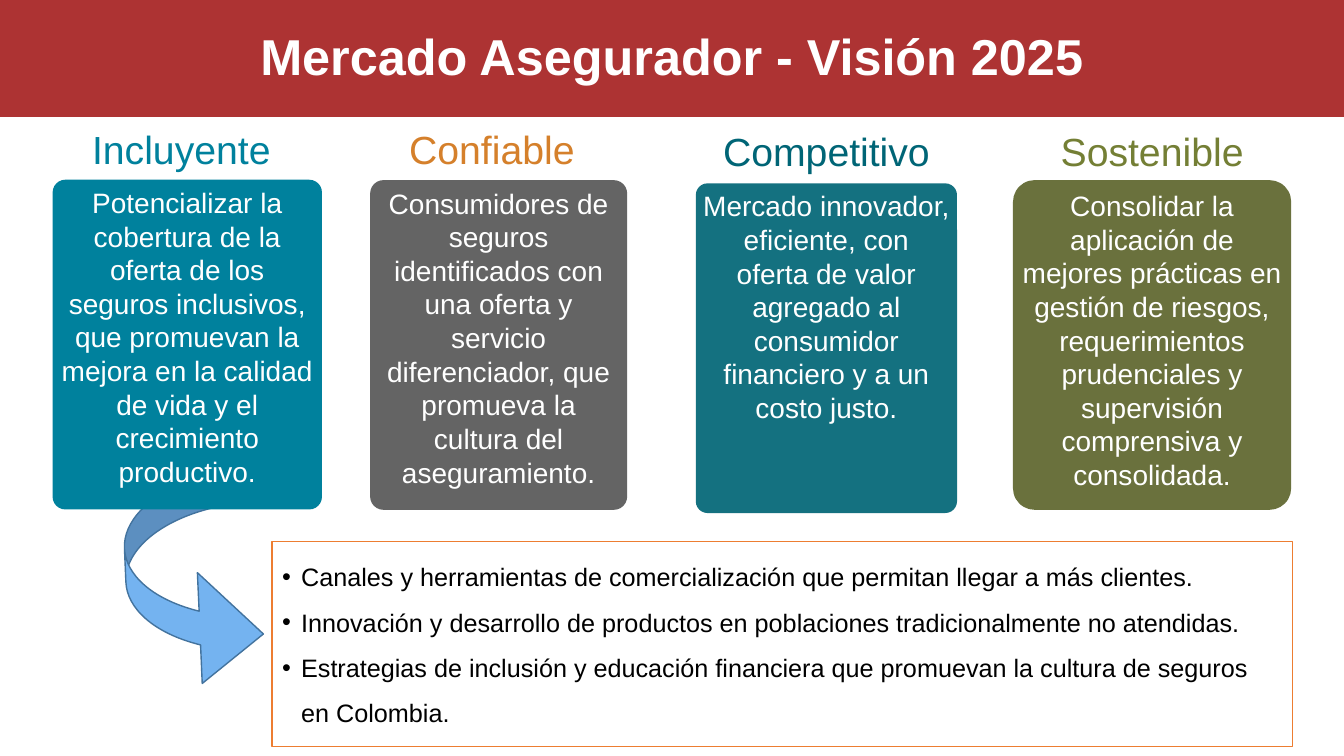
from dataclasses import dataclass

from lxml import etree
from pptx import Presentation
from pptx.dml.color import RGBColor
from pptx.enum.shapes import MSO_SHAPE
from pptx.enum.text import MSO_ANCHOR, MSO_AUTO_SIZE, PP_ALIGN
from pptx.oxml.ns import qn
from pptx.util import Pt

RECT, ROUNDED = MSO_SHAPE.RECTANGLE, MSO_SHAPE.ROUNDED_RECTANGLE
CURVED_ARROW = MSO_SHAPE.CURVED_RIGHT_ARROW
TOP, MIDDLE = MSO_ANCHOR.TOP, MSO_ANCHOR.MIDDLE
CENTER, LEFT = PP_ALIGN.CENTER, PP_ALIGN.LEFT
NO_FIT = MSO_AUTO_SIZE.NONE
Box = tuple[float, float, float, float]

COLORS = {
    "banner": "AD3333", "white": "FFFFFF", "black": "000000",
    "arrow": "74B3F0", "arrow_line": "43739E", "border": "ED7D31",
    "blue": "00819D", "orange": "D5802B", "gray": "595959",
    "teal": "006576", "olive": "747F35", "dark_olive": "5C642A",
}


@dataclass
class Pillar:
    """A heading and the card below it."""
    heading: str
    heading_box: Box
    heading_color: str
    text: str
    card_box: Box
    card_color: str
    opacity: int
    corner: float


PILLARS = [
    Pillar("Incluyente", (33.8, 66.2, 191.5, 80), "blue",
           "Potencializar la cobertura de la oferta de los seguros inclusivos, que "
           "promuevan la mejora en la calidad de vida y el crecimiento productivo.",
           (37.6, 128.4, 192.4, 235.5), "blue", 100, 0.047),
    Pillar("Confiable", (228.2, 66.2, 246.2, 80), "orange",
           "Consumidores de seguros identificados con una oferta y servicio "
           "diferenciador, que promueva la cultura del aseguramiento.",
           (264.4, 128.7, 183.6, 235.5), "gray", 93, 0.052),
    Pillar("Competitivo", (480.2, 73.4, 220.3, 68.4), "teal",
           "Mercado innovador, eficiente, con\voferta de valor agregado al "
           "consumidor financiero y a un costo justo.",
           (497, 131, 186.6, 235.5), "teal", 92, 0.045),
    Pillar("Sostenible", (712.8, 67.7, 220.3, 80), "olive",
           "Consolidar la aplicación de mejores prácticas en gestión de riesgos, "
           "requerimientos prudenciales y supervisión comprensiva y consolidada.",
           (723.6, 128.7, 198.7, 235.5), "dark_olive", 91, 0.078),
]

ACTIONS = [
    "Canales y herramientas de comercialización que permitan llegar a más clientes.",
    "Innovación y desarrollo de productos en poblaciones tradicionalmente no atendidas.",
    "Estrategias de inclusión y educación financiera que promuevan la cultura de "
    "seguros en Colombia.",
]


def rgb(name: str) -> RGBColor:
    """Look up a named colour."""
    return RGBColor.from_string(COLORS[name])


def apply(obj, values: dict) -> None:
    """Set each attribute from a dict of format values."""
    for name, value in values.items():
        setattr(obj, name, value)


def place(sp, box: Box) -> None:
    """Move and size a shape in points."""
    apply(sp, dict(zip(("left", "top", "width", "height"), map(Pt, box))))


def paint(sp, fill: str, line: str = "", opacity: int = 100) -> None:
    """Fill and outline a shape."""
    sp.fill.solid()
    sp.fill.fore_color.rgb = rgb(fill)
    if opacity < 100:
        color = sp.fill._xPr.find(qn("a:solidFill"))[0]
        etree.SubElement(color, qn("a:alpha"), val=str(opacity * 1000))
    if line:
        sp.line.color.rgb = rgb(line)
        sp.line.width = Pt(1)
    else:
        sp.line.fill.background()


def add_shape(s, kind, box: Box, fill: str, line: str = "", opacity: int = 100):
    """Add a preset shape without a shadow."""
    sp = s.shapes.add_shape(kind, *map(Pt, box))
    sp.shadow.inherit = False
    paint(sp, fill, line, opacity)
    return sp


def write(sp, text: str, size: float, color: str, bold: bool = False,
          anchor=MIDDLE, align=CENTER, **frame) -> None:
    """Write formatted text into a shape."""
    tf = sp.text_frame
    tf.text = text
    apply(tf, {"word_wrap": True, "auto_size": NO_FIT, "vertical_anchor": anchor, **frame})
    for p in tf.paragraphs:
        p.alignment = align
        for r in p.runs:
            apply(r.font, {"name": "Arial", "size": Pt(size), "bold": bold})
            r.font.color.rgb = rgb(color)


def add_bullets(tf) -> None:
    """Give every paragraph a hanging bullet."""
    for p in tf.paragraphs:
        apply(p, {"line_spacing": 1.5, "space_before": Pt(0), "space_after": Pt(0)})
        pPr = p._p.get_or_add_pPr()
        pPr.set("marL", str(Pt(13.5)))
        pPr.set("indent", str(Pt(-13.5)))
        etree.SubElement(pPr, qn("a:buFont"), typeface="Arial")
        etree.SubElement(pPr, qn("a:buChar"), char="•")


def add_pillar(s, pillar: Pillar) -> None:
    """Draw a card and its heading."""
    card = add_shape(s, ROUNDED, pillar.card_box, pillar.card_color, opacity=pillar.opacity)
    card.adjustments[0] = pillar.corner
    inset = Pt(1.5)
    write(card, pillar.text, 20, "white", anchor=TOP, margin_left=inset,
          margin_right=inset, margin_top=inset, margin_bottom=inset)
    heading = s.shapes.add_textbox(*map(Pt, pillar.heading_box))
    write(heading, pillar.heading, 28, pillar.heading_color)


def main() -> None:
    """Build and save the slide."""
    prs = Presentation()
    apply(prs, {"slide_width": Pt(960), "slide_height": Pt(540)})
    s = prs.slides.add_slide(prs.slide_layouts[1])
    title, body = s.placeholders

    add_shape(s, RECT, (0, -1.5, 960, 85), "banner")
    arrow = add_shape(s, CURVED_ARROW, (90, 336.2, 96.5, 158.4), "arrow", "arrow_line")
    arrow.rotation = 357.5
    for i, value in enumerate((0.25, 0.823, 0.468)):
        arrow.adjustments[i] = value
    for pillar in PILLARS:
        add_pillar(s, pillar)

    place(title, (0, 8.6, 960, 62.6))
    write(title, "Mercado Asegurador - Visión 2025", 36, "white", bold=True)
    place(body, (194.4, 386.8, 729, 146.6))
    paint(body, "white", "border")
    write(body, "\n".join(ACTIONS), 18, "black", anchor=TOP, align=LEFT)
    add_bullets(body.text_frame)
    for sp in (title, body):
        s.shapes._spTree.append(sp._element)

    prs.save("out.pptx")


if __name__ == "__main__":
    main()
